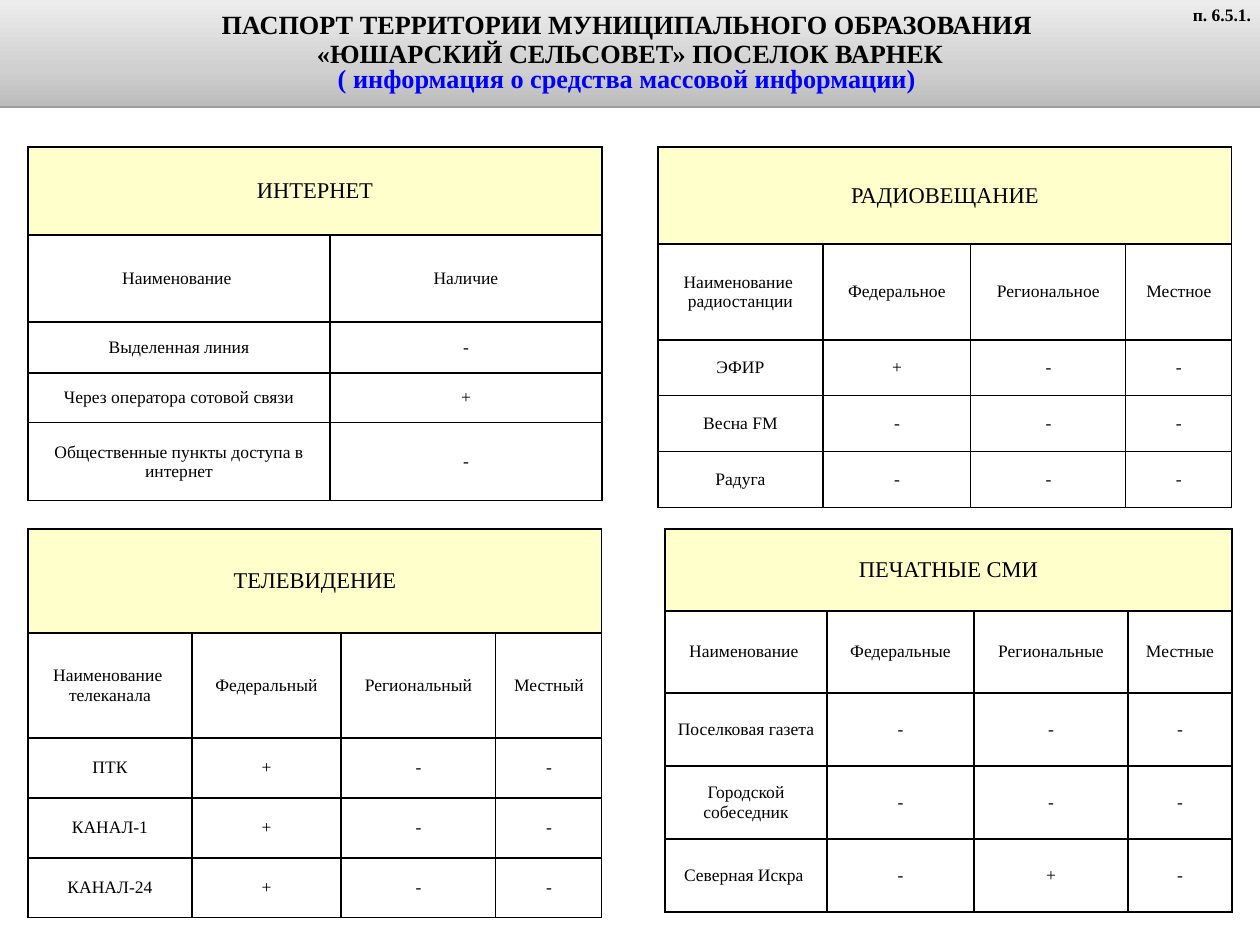
from lxml.etree import SubElement
from pptx import Presentation
from pptx.dml.color import RGBColor
from pptx.enum.text import MSO_ANCHOR, MSO_AUTO_SIZE, PP_ALIGN
from pptx.oxml import parse_xml
from pptx.oxml.ns import nsdecls, qn
from pptx.util import Pt

PX = 10160
FONT = "Times New Roman"
BLACK = RGBColor(0x00, 0x00, 0x00)
BLUE = RGBColor(0x00, 0x00, 0xFF)
CREAM = RGBColor(0xFF, 0xFF, 0xCC)
WHITE = RGBColor(0xFF, 0xFF, 0xFF)
GREYS = [
    (0, RGBColor(0xBC, 0xBC, 0xBC)),
    (35, RGBColor(0xD0, 0xD0, 0xD0)),
    (100, RGBColor(0xED, 0xED, 0xED)),
]


class Page:
    def __init__(self, deck):
        self.slide = deck.slides.add_slide(deck.slide_layouts[5])
        self.shapes = self.slide.shapes

    def style(self, para, size, color=BLACK, bold=False, align=PP_ALIGN.CENTER):
        para.alignment = align
        for run in para.runs:
            font = run.font
            font.name = FONT
            font.size = Pt(size)
            font.bold = bold
            font.color.rgb = color

    def place(self, shape, left, top, width, height):
        shape.left, shape.top = left * PX, top * PX
        shape.width, shape.height = width * PX, height * PX

    def title(self, box, parts):
        shape = self.shapes.title
        self.place(shape, *box)
        stops = "".join(
            f'<a:gs pos="{pos * 1000}"><a:srgbClr val="{color}"/></a:gs>'
            for pos, color in GREYS
        )
        props = shape._element.spPr
        props.append(parse_xml(
            f'<a:gradFill {nsdecls("a")} rotWithShape="1"><a:gsLst>{stops}</a:gsLst>'
            '<a:lin ang="16200000" scaled="1"/></a:gradFill>'
        ))
        props.append(parse_xml(
            f'<a:effectLst {nsdecls("a")}>'
            '<a:outerShdw blurRad="0" dist="20000" dir="5400000" rotWithShape="0">'
            f'<a:srgbClr val="{BLACK}"><a:alpha val="38000"/></a:srgbClr>'
            '</a:outerShdw></a:effectLst>'
        ))
        frame = shape.text_frame
        frame.auto_size = MSO_AUTO_SIZE.NONE
        frame.word_wrap = True
        frame.vertical_anchor = MSO_ANCHOR.MIDDLE
        frame.text = "\n".join(text for text, _, _ in parts)
        for para, (_, color, space) in zip(frame.paragraphs, parts):
            para.line_spacing = space
            self.style(para, 21, color, True)

    def label(self, box, text):
        shape = self.shapes.add_textbox(*(n * PX for n in box))
        frame = shape.text_frame
        frame.word_wrap = True
        frame.text = text
        self.style(frame.paragraphs[0], 14, bold=True, align=PP_ALIGN.RIGHT)

    def border(self, cell):
        props = cell._tc.get_or_add_tcPr()
        for side in ("a:lnL", "a:lnR", "a:lnT", "a:lnB"):
            line = SubElement(props, qn(side), w=str(Pt(1)))
            fill = SubElement(line, qn("a:solidFill"))
            SubElement(fill, qn("a:srgbClr"), val=str(BLACK))

    def cell(self, cell, text, size, color):
        self.border(cell)
        cell.fill.solid()
        cell.fill.fore_color.rgb = color
        cell.vertical_anchor = MSO_ANCHOR.MIDDLE
        cell.margin_left = cell.margin_right = 3 * PX
        cell.margin_top = cell.margin_bottom = 3 * PX
        cell.text_frame.text = text
        for para in cell.text_frame.paragraphs:
            self.style(para, size)

    def table(self, left, top, cols, rows, name, data):
        box = (left, top, sum(cols), sum(rows))
        frame = self.shapes.add_table(len(rows), len(cols), *(n * PX for n in box))
        grid = frame.table
        grid.first_row = grid.horz_banding = False
        for col, width in zip(grid.columns, cols):
            col.width = width * PX
        for row, height in zip(grid.rows, rows):
            row.height = height * PX
        head = [name] + [""] * (len(cols) - 1)
        for r, line in enumerate([head] + data):
            size, color = (14, WHITE) if r else (18, CREAM)
            for c, text in enumerate(line):
                self.cell(grid.cell(r, c), text, size, color)
        grid.cell(0, 0).merge(grid.cell(0, len(cols) - 1))


def main():
    deck = Presentation()
    deck.slide_width, deck.slide_height = 1260 * PX, 945 * PX
    page = Page(deck)
    page.title((0, 0, 1260, 106), [
        ("ПАСПОРТ ТЕРРИТОРИИ МУНИЦИПАЛЬНОГО ОБРАЗОВАНИЯ \v"
         "«ЮШАРСКИЙ СЕЛЬСОВЕТ» ПОСЕЛОК ВАРНЕК", BLACK, 0.9),
        ("( информация о средства массовой информации) ", BLUE, 0.8),
    ])
    page.table(658, 147, [165, 148, 155, 106], [97, 96, 56, 56, 56], "РАДИОВЕЩАНИЕ", [
        ["Наименование \nрадиостанции", "Федеральное", "Региональное", "Местное"],
        ["ЭФИР", "+", "-", "-"],
        ["Весна FM", "-", "-", "-"],
        ["Радуга", "-", "-", "-"],
    ])
    page.table(28, 529, [164, 149, 155, 106], [104, 105, 60, 60, 60], "ТЕЛЕВИДЕНИЕ", [
        ["Наименование \nтелеканала", "Федеральный", "Региональный", "Местный"],
        ["ПТК", "+", "-", "-"],
        ["КАНАЛ-1", "+", "-", "-"],
        ["КАНАЛ-24", "+", "-", "-"],
    ])
    page.table(665, 529, [162, 147, 154, 104], [82, 82, 73, 73, 73], "ПЕЧАТНЫЕ СМИ", [
        ["Наименование ", "Федеральные", "Региональные", "Местные"],
        ["Поселковая газета", "-", "-", "-"],
        ["Городской собеседник", "-", "-", "-"],
        ["Северная Искра ", "-", "+", "-"],
    ])
    page.table(28, 147, [302, 272], [88, 87, 51, 50, 78], "ИНТЕРНЕТ", [
        ["Наименование ", "Наличие"],
        ["Выделенная линия", "-"],
        ["Через оператора сотовой связи", "+"],
        ["Общественные пункты доступа в интернет", "-"],
    ])
    page.label((1175, 0, 85, 30), "п. 6.5.1.")
    deck.save("out.pptx")


if __name__ == "__main__":
    main()
